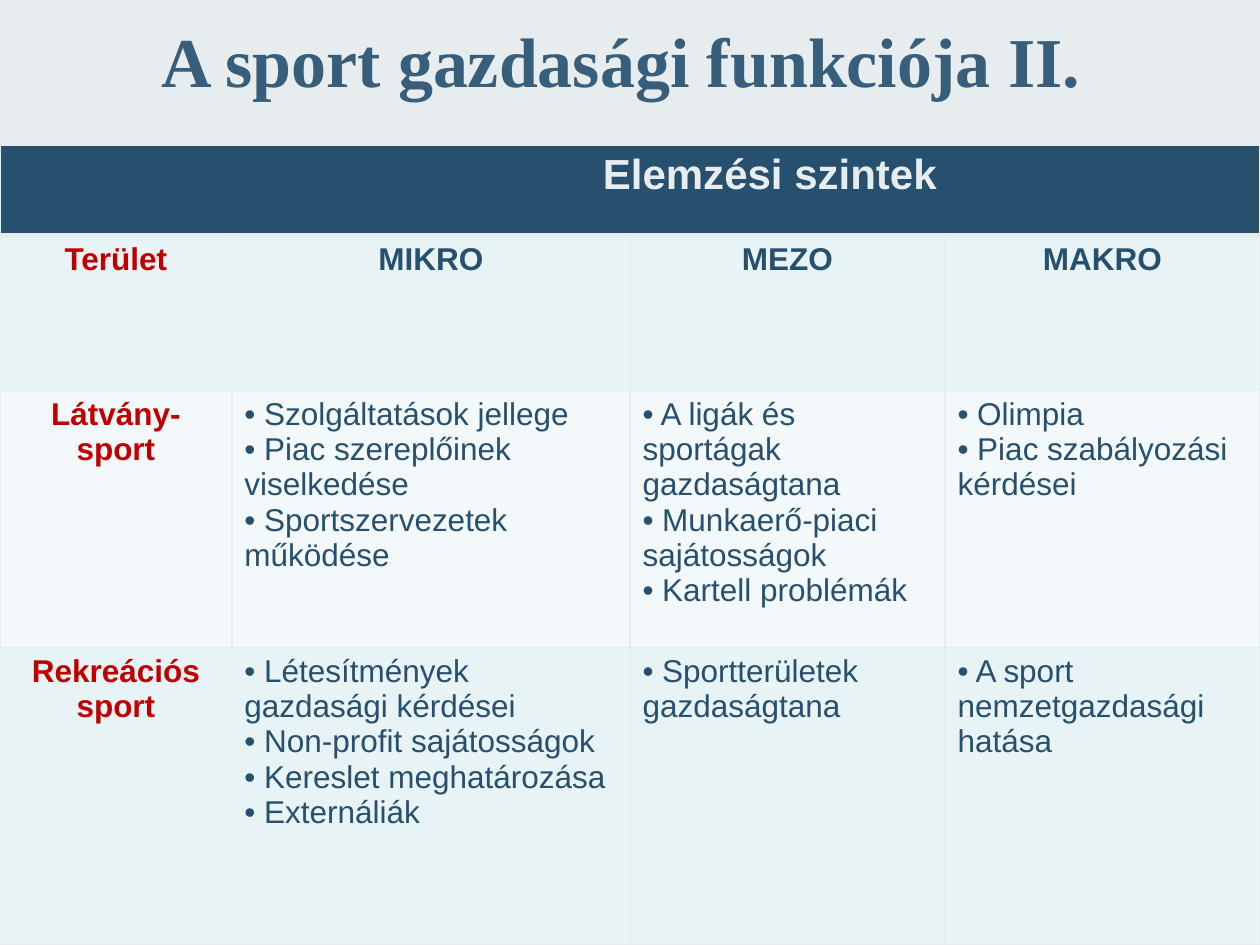
from dataclasses import dataclass

from lxml import etree
from pptx import Presentation
from pptx.dml.color import RGBColor
from pptx.enum.text import MSO_ANCHOR, PP_ALIGN
from pptx.oxml.ns import qn
from pptx.util import Inches, Pt

CENTER, LEFT = PP_ALIGN.CENTER, PP_ALIGN.LEFT
MIDDLE = MSO_ANCHOR.MIDDLE
TITLE_ONLY = 5

PALE, NAVY, RED, TITLE_BLUE = "E7ECEF", "26506E", "C00000", "375E7A"
TINT, LIGHT_TINT = "E7F3F4", "F3F9FA"
COLUMN_WIDTHS = (1.84, 3.16, 2.5, 2.5)
ROW_HEIGHTS = (0.72, 1.23, 2.04, 2.36)
HEADER_LEFT_MARGIN = 2.32
LEVELS = ("MIKRO", "MEZO", "MAKRO")


@dataclass(frozen=True)
class Area:
    name: str
    fill: str
    topics: tuple[tuple[str, ...], ...]


AREAS = (
    Area("Látvány-sport", LIGHT_TINT, (
        ("Szolgáltatások jellege", "Piac szereplőinek viselkedése",
         "Sportszervezetek működése"),
        ("A ligák és sportágak gazdaságtana", "Munkaerő-piaci sajátosságok",
         "Kartell problémák"),
        ("Olimpia", "Piac szabályozási kérdései"),
    )),
    Area("Rekreációs sport", TINT, (
        ("Létesítmények gazdasági kérdései", "Non-profit sajátosságok",
         "Kereslet meghatározása", "Externáliák"),
        ("Sportterületek gazdaságtana",),
        ("A sport nemzetgazdasági hatása",),
    )),
)


def color(value: str) -> RGBColor:
    return RGBColor.from_string(value)


def format_paragraph(paragraph, size: float, ink: str, bold: bool,
                     align=CENTER, face: str = "Arial") -> None:
    paragraph.alignment = align
    for span in paragraph.runs:
        span.font.name = face
        span.font.size = Pt(size)
        span.font.bold = bold
        span.font.color.rgb = color(ink)


def add_bullet(paragraph) -> None:
    """Bullet whose wrapped lines return to the cell margin."""
    properties = paragraph._p.get_or_add_pPr()
    properties.set("marL", "0")
    properties.set("indent", "0")
    etree.SubElement(properties, qn("a:buFont"), typeface="Arial")
    etree.SubElement(properties, qn("a:buChar"), char="•")


def style_cell(cell, fill: str, top: float = 1, bottom: float = 1) -> None:
    """Set the borders, then the fill, in the order the schema asks for."""
    properties = cell._tc.get_or_add_tcPr()
    for side, width in (("L", 1), ("R", 1), ("T", top), ("B", bottom)):
        line = etree.SubElement(properties, qn(f"a:ln{side}"), w=str(Pt(width)))
        paint = etree.SubElement(line, qn("a:solidFill"))
        etree.SubElement(paint, qn("a:srgbClr"), val=PALE)
    cell.fill.solid()
    cell.fill.fore_color.rgb = color(fill)


def write_label(cell, text: str, ink: str, size: float = 18) -> None:
    cell.text_frame.text = text
    format_paragraph(cell.text_frame.paragraphs[0], size, ink, True)


def write_topics(cell, topics: tuple[str, ...]) -> None:
    cell.text_frame.text = "\n".join(f" {topic}" for topic in topics)
    for paragraph in cell.text_frame.paragraphs:
        add_bullet(paragraph)
        format_paragraph(paragraph, 18, NAVY, False, LEFT)


def add_title(slide) -> None:
    title = slide.shapes.title
    title.left, title.top = Inches(0.2), Inches(0.02)
    title.width, title.height = Inches(9.45), Inches(0.91)
    title.text_frame.text = "A sport gazdasági funkciója II."
    title.text_frame.vertical_anchor = MIDDLE
    format_paragraph(title.text_frame.paragraphs[0], 40, TITLE_BLUE, True,
                     face="Times New Roman")


def add_levels_table(slide) -> None:
    table = slide.shapes.add_table(
        len(ROW_HEIGHTS), len(COLUMN_WIDTHS), Inches(0), Inches(1.15),
        Inches(sum(COLUMN_WIDTHS)), Inches(sum(ROW_HEIGHTS))).table
    for column, width in zip(table.columns, COLUMN_WIDTHS):
        column.width = Inches(width)
    for row, height in zip(table.rows, ROW_HEIGHTS):
        row.height = Inches(height)

    for cell in table.rows[0].cells:
        style_cell(cell, NAVY, bottom=3)
    header = table.cell(0, 0)
    header.merge(table.cell(0, len(COLUMN_WIDTHS) - 1))
    header.margin_left = Inches(HEADER_LEFT_MARGIN)
    write_label(header, "Elemzési szintek", PALE, 24)

    for index, label in enumerate(("Terület", *LEVELS)):
        cell = table.cell(1, index)
        style_cell(cell, TINT, top=3)
        write_label(cell, label, NAVY if index else RED)

    for row_index, area in enumerate(AREAS, start=2):
        for cell in table.rows[row_index].cells:
            style_cell(cell, area.fill)
        write_label(table.cell(row_index, 0), area.name, RED)
        for column_index, topics in enumerate(area.topics, start=1):
            write_topics(table.cell(row_index, column_index), topics)


def main() -> None:
    deck = Presentation()
    deck.slide_width, deck.slide_height = Inches(10), Inches(7.5)
    slide = deck.slides.add_slide(deck.slide_layouts[TITLE_ONLY])
    slide.background.fill.solid()
    slide.background.fill.fore_color.rgb = color(PALE)
    add_title(slide)
    add_levels_table(slide)
    deck.save("out.pptx")


if __name__ == "__main__":
    main()
